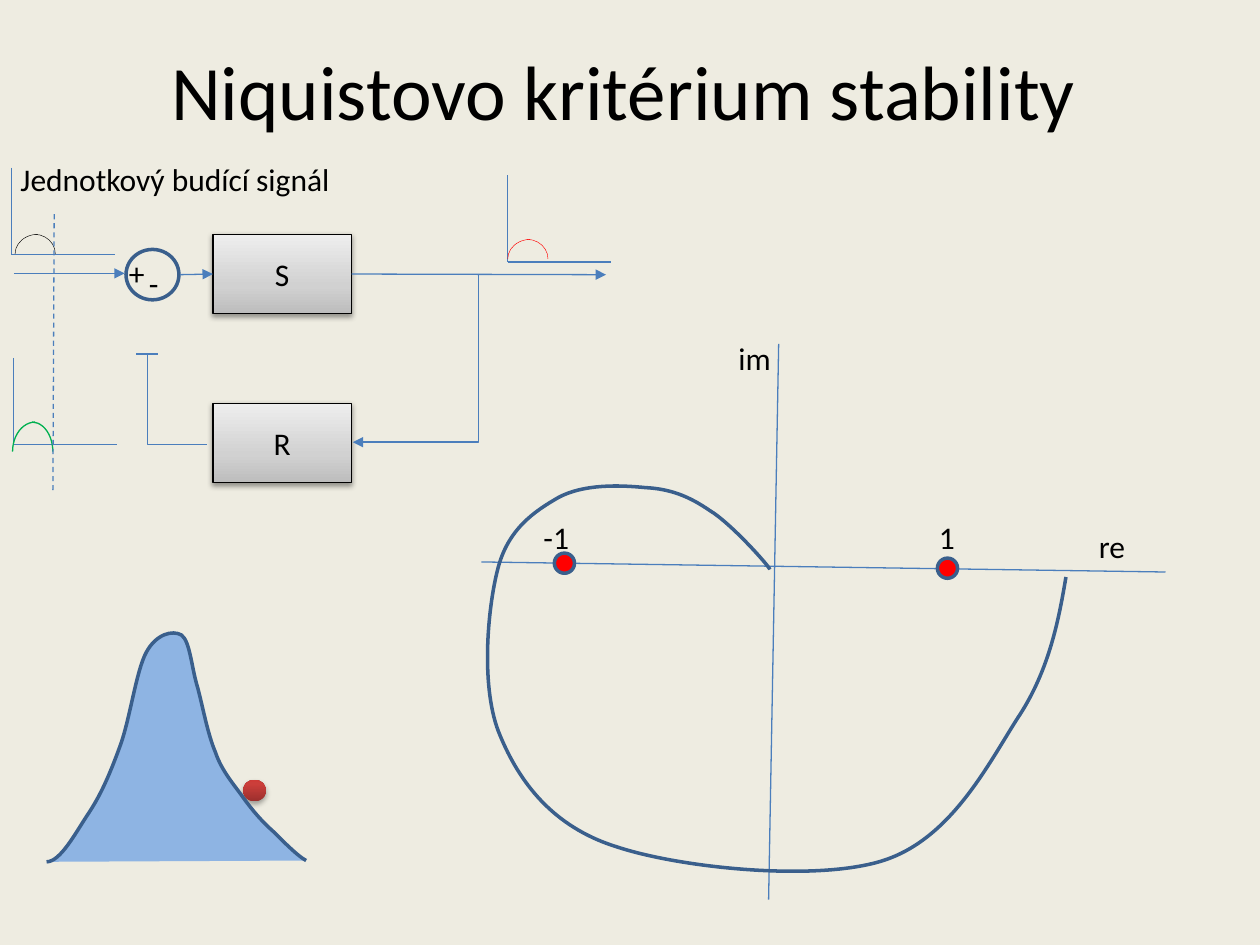
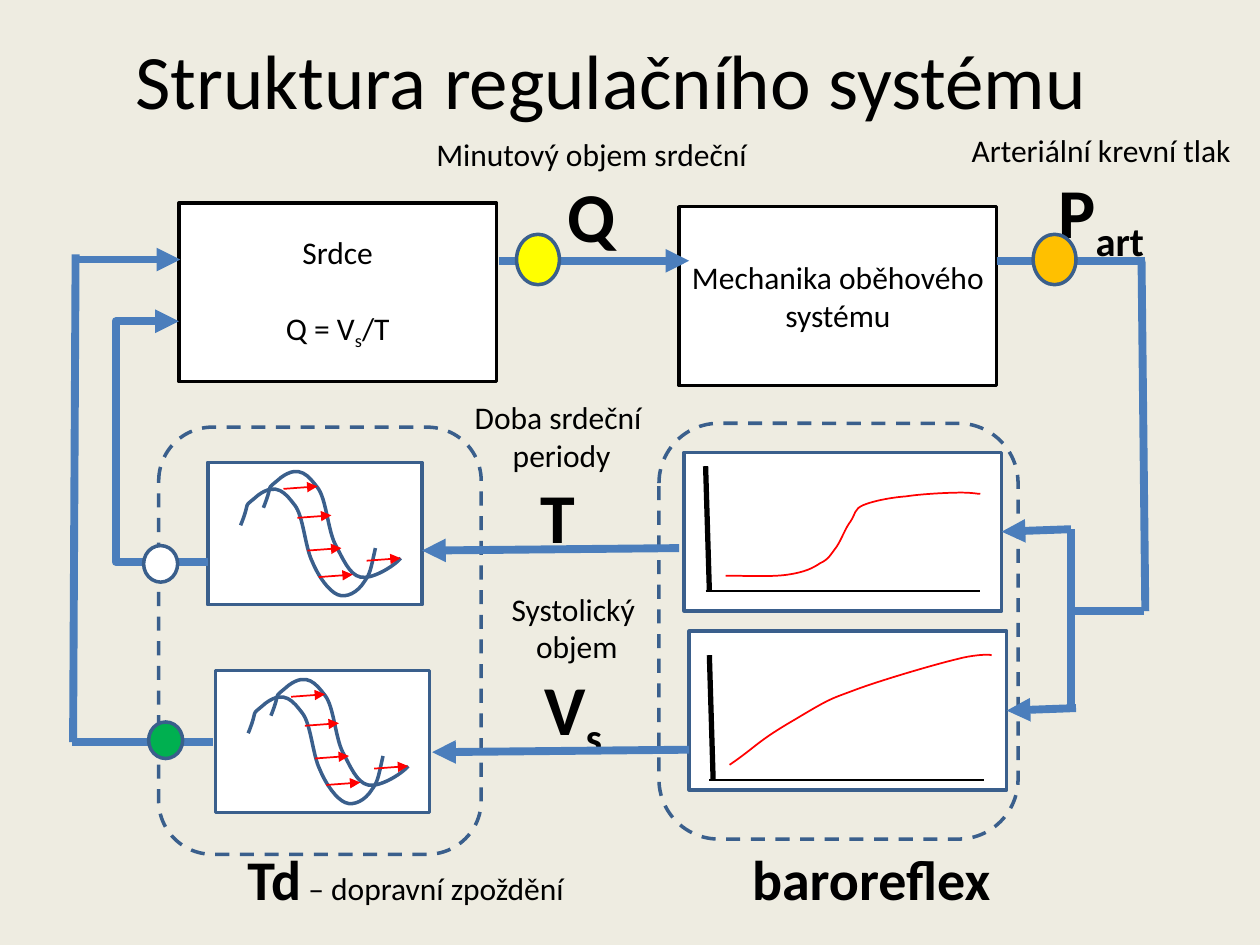
from dataclasses import dataclass

from lxml import etree
from pptx import Presentation, util as u
from pptx.dml.color import RGBColor
from pptx.enum import dml, shapes as kinds, text
from pptx.oxml.ns import qn

FONT = "Calibri"
SAND = RGBColor(0xEE, 0xEC, 0xE1)
BLACK = RGBColor(0, 0, 0)
WHITE = RGBColor(0xFF, 0xFF, 0xFF)
WIRE = RGBColor(0x4B, 0x7E, 0xBC)
NAVY = RGBColor(0x3A, 0x5F, 0x8C)
HILL = RGBColor(0x8E, 0xB4, 0xE3)
RED = RGBColor(0xFF, 0, 0)
GREEN = RGBColor(0, 0xB0, 0x50)
YELLOW = RGBColor(0xFF, 0xFF, 0)
AMBER = RGBColor(0xFF, 0xC0, 0)
STEEL = [(0, RGBColor(0xBD, 0xBD, 0xBD)), (0.35, RGBColor(0xD1, 0xD1, 0xD1)),
         (1, RGBColor(0xEE, 0xEE, 0xEE))]
CRIMSON = [(0, RGBColor(0x9C, 0x2F, 0x2D)), (0.8, RGBColor(0xCB, 0x3E, 0x3A)),
           (1, RGBColor(0xCE, 0x3B, 0x37))]

# The slide is a grid of 100 columns and 75 rows; every length counts cells.
SLIDE_W, SLIDE_H = u.Inches(10), u.Inches(7.5)
COL, ROW = SLIDE_W / 100, SLIDE_H / 75
BODY, LARGE, SYMBOL = 18, 32, 40
SHAPE = kinds.MSO_SHAPE


def style_line(line, colour, width, dashed=False):
    line.color.rgb = colour
    line.width = u.Pt(width)
    if dashed:
        line.dash_style = dml.MSO_LINE.DASH


def fill_gradient(shape, stops):
    shape.fill.gradient()
    shape.fill.gradient_angle = 90
    stop_list = shape._element.spPr.find(".//" + qn("a:gsLst"))
    while len(stop_list) < len(stops):
        extra = etree.fromstring(etree.tostring(stop_list[0]))
        etree.SubElement(stop_list, qn("a:gs"), pos="0").extend(list(extra))
    for stop, (position, colour) in zip(shape.fill.gradient_stops, stops):
        stop.position = position
        stop.color.rgb = colour


def drop_shadow(shape, alpha):
    effects = shape._element.spPr.find(qn("a:effectLst"))
    shade = etree.SubElement(effects, qn("a:outerShdw"), blurRad="39400", dist="20300",
                             dir="5400000", rotWithShape="0")
    colour = etree.SubElement(shade, qn("a:srgbClr"), val="000000")
    etree.SubElement(colour, qn("a:alpha"), val=str(alpha * 1000))


def write(frame, paragraphs, gap=0):
    """Each paragraph lists runs of (wording, size, bold, subscript)."""
    for i, runs in enumerate(paragraphs):
        paragraph = frame.paragraphs[0] if i == 0 else frame.add_paragraph()
        paragraph.alignment = text.PP_ALIGN.CENTER
        if i:
            paragraph.space_before = u.Pt(gap)
        for wording, size, bold, subscript in runs:
            run = paragraph.add_run()
            run.text = wording
            font = run.font
            font.name, font.size, font.bold = FONT, u.Pt(size), bold
            font.color.rgb = BLACK
            if subscript:
                run._r.get_or_add_rPr().set("baseline", "-25000")


def plain(wording):
    return [(wording, BODY, False, False)]


def strong(wording, size=SYMBOL, index=None):
    runs = [(wording, size, True, False)]
    return runs + [(index, size, True, True)] if index else runs


@dataclass
class Region:
    """An area of a slide; its contents are placed in grid cells from its corner."""
    slide: object
    left: float = 0
    top: float = 0

    def area(self, x, y):
        return Region(self.slide, self.left + x, self.top + y)

    def point(self, x, y):
        return round((self.left + x) * COL), round((self.top + y) * ROW)

    def shape(self, kind, x, y, w, h, fill=None, line=None, width=2, dashed=False):
        shape = self.slide.shapes.add_shape(
            kind, *self.point(x, y), round(w * COL), round(h * ROW))
        shape.shadow.inherit = False
        if isinstance(fill, list):
            fill_gradient(shape, fill)
        elif fill is None:
            shape.fill.background()
        else:
            shape.fill.solid()
            shape.fill.fore_color.rgb = fill
        if line is None:
            shape.line.fill.background()
        else:
            style_line(shape.line, line, width, dashed)
        return shape

    def line(self, start, end, colour=WIRE, width=0.75, arrow=None, dashed=False,
             kind=kinds.MSO_CONNECTOR.STRAIGHT):
        """arrow is None, "headEnd" (at start) or "tailEnd" (at end)."""
        line = self.slide.shapes.add_connector(
            kind, *self.point(*start), *self.point(*end))
        style_line(line.line, colour, width, dashed)
        if arrow:
            etree.SubElement(line.line._get_or_add_ln(), qn("a:" + arrow), type="triangle")
        etree.SubElement(line._element.spPr, qn("a:effectLst"))
        return line

    def elbow(self, start, end, preset, bend=None, **style):
        line = self.line(start, end, kind=kinds.MSO_CONNECTOR.ELBOW, **style)
        geometry = line._element.spPr.find(qn("a:prstGeom"))
        geometry.set("prst", preset)
        if bend is not None:
            guides = geometry.find(qn("a:avLst"))
            etree.SubElement(guides, qn("a:gd"), name="adj1",
                             fmla=f"val {round(bend * 100000)}")

    def curve(self, points, colour=NAVY, width=2, fill=None):
        """Bezier curve: a start, then two handles and an end for each piece."""
        start, *rest = [self.point(*p) for p in points]
        builder = self.slide.shapes.build_freeform(*start)
        builder.add_line_segments(rest, close=False)
        shape = builder.convert_to_shape()
        outline = shape._element.spPr.find(".//" + qn("a:path"))
        corners = outline.findall(qn("a:lnTo"))
        for i in range(0, len(corners), 3):
            piece = etree.SubElement(outline, qn("a:cubicBezTo"))
            for corner in corners[i:i + 3]:
                piece.append(corner[0])
                outline.remove(corner)
        shape.shadow.inherit = False
        if fill is None:
            shape.fill.background()
        else:
            shape.fill.solid()
            shape.fill.fore_color.rgb = fill
        style_line(shape.line, colour, width)

    def label(self, x, y, w, h, *paragraphs):
        box = self.slide.shapes.add_textbox(
            *self.point(x, y), round(w * COL), round(h * ROW))
        box.text_frame.word_wrap = False
        box.text_frame.auto_size = text.MSO_AUTO_SIZE.SHAPE_TO_FIT_TEXT
        write(box.text_frame, paragraphs)

    def block(self, x, y, w, h, fill, width, *paragraphs, gap=0):
        block = self.shape(SHAPE.RECTANGLE, x, y, w, h, fill, BLACK, width)
        block.text_frame.vertical_anchor = text.MSO_ANCHOR.MIDDLE
        write(block.text_frame, paragraphs, gap)
        return block


def titled_slide(prs, wording, x, y):
    slide = prs.slides.add_slide(prs.slide_layouts[5])
    title = slide.shapes.title
    title.left, title.top = round(x * COL), round(y * ROW)
    title.width, title.height = round(90 * COL), round(12.5 * ROW)
    title.text_frame.vertical_anchor = text.MSO_ANCHOR.MIDDLE
    write(title.text_frame, [[(wording, 44, False, False)]])
    return slide


def signal_plot(region, colour, bump_x, bump_y, bump_h, width=0.25):
    region.line((0, 0), (0, 6.9))
    region.line((0, 6.9), (8.2, 6.9))
    region.shape(SHAPE.ARC, bump_x, bump_y, 3.3, bump_h, None, colour, width)
    rise = region.shape(SHAPE.ARC, bump_x + 0.1, bump_y, 3.6, bump_h, None, colour, width)
    rise._element.spPr.find(qn("a:xfrm")).set("flipH", "1")


def control_loop(region):
    system, regulator = [region.block(16.9, y, 11, 6.3, STEEL, 0.75, plain(name))
                         for name, y in (("S", 6.6), ("R", 20))]
    for block in (system, regulator):
        drop_shadow(block, 38)
    output = region.line((27.9, 9.8), (48.1, 9.8), arrow="tailEnd")
    output.begin_connect(system, 3)
    region.elbow((28, 23.1), (38, 9.8), "bentConnector2", arrow="headEnd")
    region.elbow((16.4, 23.3), (11.7, 16.1), "bentConnector2")
    region.shape(SHAPE.OVAL, 10, 7.8, 4.2, 4, None, NAVY)
    region.label(10.8, 8.5, 2.8, 4, plain("-"))
    region.label(9.2, 7.7, 3.3, 4, plain("+"))
    error = region.line((14.3, 9.8), (16.9, 9.8), arrow="tailEnd")
    error.end_connect(system, 1)
    region.line((1.1, 9.7), (9.9, 9.7), arrow="tailEnd")
    region.line((10.8, 16.1), (12.5, 16.1))
    signal_plot(region.area(1.1, 16.4), GREEN, -0.2, 5.1, 4.7, 0.75)
    signal_plot(region.area(0.9, 1.3), BLACK, 0.2, 5.3, 3.1)
    signal_plot(region.area(40.3, 1.9), RED, -0.1, 5.1, 3.1)
    region.line((4.3, 5), (4.2, 27.1), dashed=True)
    region.label(0.5, 0.2, 26.8, 4, plain("Jednotkový budící signál"))


def nyquist_plot(region):
    region.line((23.8, 1.3), (23, 45.4))
    region.line((54.5, 19.4), (0.2, 18.6))
    region.curve([
        (46.6, 19.8), (46, 23.4), (45.2, 27.4), (42.7, 31.1), (40.3, 34.9), (37.4, 40.6),
        (32.1, 42.3), (26.8, 44), (16, 42.9), (10.9, 41.2), (5.8, 39.6), (3.2, 36),
        (1.7, 32.4), (0.1, 28.7), (0.7, 22.3), (1.5, 19.2), (2.3, 16), (4.4, 14.6),
        (6.3, 13.5), (8.3, 12.4), (11.2, 12.5), (13.2, 12.7), (15.2, 12.8), (16.7, 13.4),
        (18.3, 14.5), (20, 15.5), (23.1, 19), (23.1, 19.2)])
    for x, y in ((36.4, 18.3), (6, 17.9)):
        region.shape(SHAPE.OVAL, x, y, 1.6, 1.6, RED, NAVY)
    for wording, x, y, w in (("im", 19.6, 0.4, 4.6), ("re", 48.2, 15.3, 4.1),
                             ("-1", 4.1, 14.6, 4.1), ("1", 35.5, 14.6, 3.3)):
        region.label(x, y, w, 4, plain(wording))


def ball_on_hill(region):
    drop_shadow(region.shape(SHAPE.OVAL, 15.6, 11.7, 1.8, 1.7, CRIMSON), 35)
    region.curve([
        (0, 18.2), (1.1, 18.2), (2.3, 15.9), (3.3, 14.4), (4.3, 12.9), (5, 11.3),
        (5.8, 9.1), (6.6, 7), (7.1, 3.1), (7.9, 1.6), (8.7, 0.1), (10, -0.2),
        (10.7, 0.2), (11.4, 0.7), (11.5, 2.8), (12, 4.4), (12.4, 5.9), (12.8, 8.1),
        (13.4, 9.5), (13.9, 11), (14.9, 12.1), (15.6, 13.1), (16.4, 14.2), (17.1, 15),
        (18, 15.8), (18.8, 16.6), (20, 17.8), (20.6, 18.1)], fill=HILL)


def delay_tile(region):
    """A wave and the same wave shifted by the transport delay."""
    region.shape(SHAPE.RECTANGLE, 0, 0, 17, 11.3, WHITE, NAVY)
    rise = [(2.6, 5), (3.5, 2.8), (2.6, 3.8), (4, 2.6), (5.5, 1.5), (6.2, 2.5),
            (6.9, 3.4), (7.6, 4.3), (7.7, 6.7), (8.3, 7.9)]
    region.curve(rise + [(8.8, 9.1), (9.6, 10.2), (10.3, 10.5), (11, 10.8), (11.9, 10.3),
                         (12.4, 9.5), (12.9, 8.8), (12.9, 8.6), (13.3, 6.8)])
    region.curve([(x + 1.8, y - 1.4) for x, y in rise]
                 + [(10.7, 7.6), (11.2, 8.9), (12.1, 9.1), (13, 9.3), (14.7, 8.3),
                    (15.3, 7.6)])
    for x, y in ((6, 2.1), (7.1, 4.4), (7.9, 7), (8.8, 9.1), (12.6, 7.8)):
        region.line((x, y), (x + 2.7, y - 0.2), RED, 1, "tailEnd")


def response_tile(region, axis_x, axis_y, response):
    tile = region.shape(SHAPE.RECTANGLE, 0, 0, 25.2, 12.6, WHITE, NAVY)
    region.curve(response, RED, 1)
    foot = axis_y + 9.9
    region.line((axis_x, axis_y), (axis_x + 0.3, foot), BLACK, 3)
    region.line((axis_x, foot), (axis_x + 21.8, foot), BLACK, 1.5)
    return tile


def baroreflex(region):
    """Returns the two tiles, for the wires that end on them."""
    period = response_tile(region.area(2, 2.3), 1.7, 1.1, [
        (3.3, 9.8), (5.2, 9.8), (7.1, 9.9), (8.3, 9.7), (9.6, 9.5), (10.2, 9.2),
        (10.8, 8.8), (11.5, 8.5), (11.7, 8), (12.1, 7.5), (12.5, 6.9), (12.8, 6),
        (13.2, 5.5), (13.6, 4.9), (13.5, 4.5), (14.2, 4.2), (14.9, 3.9), (16.3, 3.6),
        (17.6, 3.5), (18.9, 3.3), (21, 3.2), (22, 3.2), (22.9, 3.2), (23.2, 3.3),
        (23.5, 3.3)])
    volume = response_tile(region.area(2.4, 16.5), 1.6, 1.9, [
        (3.2, 10.6), (5.4, 9.1), (5.3, 8.8), (8.4, 7), (11.4, 5.2), (11.2, 5.4),
        (13.3, 4.6), (15.5, 3.8), (19.6, 2.6), (21.3, 2.2), (22.4, 1.9), (23.7, 1.8),
        (24, 1.9)])
    region.shape(SHAPE.ROUNDED_RECTANGLE, 0, 0, 28.5, 33, None, NAVY, dashed=True)
    return period, volume


def transport_delay(region):
    region.shape(SHAPE.ROUNDED_RECTANGLE, 0, 0, 25.6, 33.9, None, NAVY, dashed=True)
    delay_tile(region.area(3.9, 2.8))
    delay_tile(region.area(4.5, 19.3))


def circulation(region):
    region.block(0, 0, 25.2, 14.2, WHITE, 2, plain("Srdce"),
                 plain("Q = V") + [("s", BODY, False, True)] + plain("/T"), gap=21.6)
    region.block(39.7, 0.3, 25.2, 14.2, WHITE, 2, plain("Mechanika oběhového systému"))


def quantity_labels(region):
    region.label(33.5, 10.2, 26.9, 10.8, plain("Minutový objem srdeční"), strong("Q"))
    region.label(36.6, 31.1, 15.4, 13.8, plain("Doba srdeční"), plain(" periody"), strong("T"))
    region.label(39.5, 46.3, 12, 13.8, plain("Systolický"), plain(" objem"),
                 strong("V", index="s"))
    region.label(18.5, 66.5, 27.4, 6.4, strong("Td", LARGE) + plain(" – dopravní zpoždění"))
    region.label(58.6, 66.5, 21.1, 6.4, strong("baroreflex", LARGE))
    region.label(76, 9.9, 22.8, 10.8, plain("Arteriální krevní tlak"),
                 strong("P", index="art"))


def signal_wires(region, tiles):
    for start, end, arrow in (
            ((39.6, 20.7), (54.7, 20.7), "tailEnd"), ((79.1, 20.7), (90.9, 20.7), None),
            ((90.6, 20.7), (90.9, 48.5), None), ((85, 42), (85, 56.3), None),
            ((90.8, 48.5), (84.9, 48.5), None), ((53.9, 43.5), (33.5, 43.7), "tailEnd"),
            ((54.7, 59.5), (34.3, 59.7), "tailEnd"), ((16.9, 58.9), (5.7, 58.9), None),
            ((5.8, 58.9), (6, 20.2), None), ((5.9, 20.6), (14.3, 20.6), "tailEnd")):
        region.line(start, end, width=4.5, arrow=arrow)
    for tile, start, end in zip(tiles, ((79.5, 42.2), (79.9, 56.4)), ((85, 42), (85.4, 56.2))):
        region.line(start, end, width=4.5, arrow="headEnd").begin_connect(tile, 3)
    region.elbow((16.5, 44.6), (14.2, 25.5), "bentConnector3", 3.18, width=4.5,
                 arrow="tailEnd")
    for x, y, w, h, colour in ((82, 18.6, 3.4, 4, AMBER), (41, 18.6, 3.4, 4, YELLOW),
                               (11.8, 57.3, 2.7, 2.9, GREEN), (11.4, 43.3, 2.7, 2.9, WHITE)):
        region.shape(SHAPE.OVAL, x, y, w, h, colour, NAVY)


def stability_slide(prs):
    slide = titled_slide(prs, "Niquistovo kritérium stability", 4.5, 0.9)
    nyquist_plot(Region(slide, 38, 26))
    control_loop(Region(slide, 0, 12))
    ball_on_hill(Region(slide, 3.7, 50.2))


def structure_slide(prs):
    slide = titled_slide(prs, "Struktura regulačního systému", 3.5, 0)
    circulation(Region(slide, 14.2, 16.1))
    quantity_labels(Region(slide))
    transport_delay(Region(slide, 12.6, 33.9))
    tiles = baroreflex(Region(slide, 52.3, 33.6))
    signal_wires(Region(slide), tiles)


def main():
    prs = Presentation()
    prs.slide_width, prs.slide_height = SLIDE_W, SLIDE_H
    backdrop = prs.slide_master.background.fill
    backdrop.solid()
    backdrop.fore_color.rgb = SAND
    stability_slide(prs)
    structure_slide(prs)
    prs.save("out.pptx")


if __name__ == "__main__":
    main()
